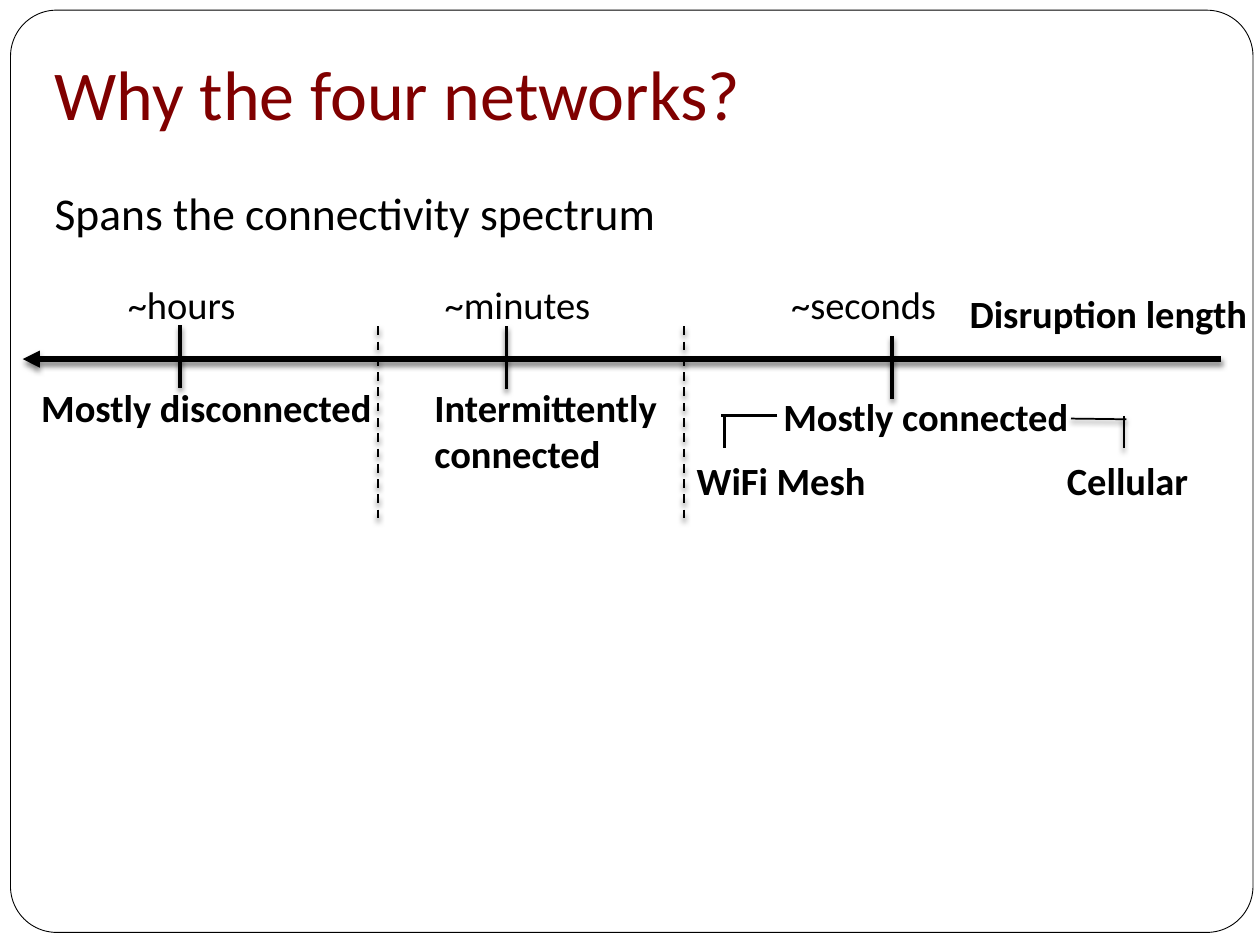
from dataclasses import dataclass

from lxml import etree
from pptx import Presentation
from pptx.dml.color import RGBColor
from pptx.enum import dml, shapes, text
from pptx.oxml import ns
from pptx.util import Pt


@dataclass(frozen=True)
class Theme:
    font: str = "Calibri"
    ink: RGBColor = RGBColor(0, 0, 0)
    paper: RGBColor = RGBColor(255, 255, 255)
    accent: RGBColor = RGBColor(128, 0, 0)
    title: float = 40
    body: float = 26
    label: float = 22


@dataclass(frozen=True)
class Label:
    words: str
    left: float
    top: float
    width: float
    bold: bool = True
    height: float = 34


@dataclass(frozen=True)
class Line:
    x1: float
    y1: float
    x2: float
    y2: float
    weight: float
    shade: bool = True
    dash: bool = False
    arrow: bool = False


THEME = Theme()

LABELS = [
    Label("~hours", 66, 157, 77, False),
    Label("~minutes", 247, 157, 99, False),
    Label("~seconds", 445, 157, 99, False),
    Label("Disruption length", 547, 162, 175),
    Label("Mostly disconnected", 16.5, 216, 205),
    Label("Intermittently\nconnected", 241.2, 216, 144, height=60.5),
    Label("Mostly connected", 440.6, 221, 180),
    Label("WiFi Mesh", 391, 257.8, 137.5),
    Label("Cellular", 602.6, 257.8, 105),
]

BOUNDS = [Line(x, 186.5, x, 298, 1.25, dash=True) for x in (216, 391)]
AXIS = Line(13, 205.2, 697.7, 205.2, 3.25, arrow=True)
TICKS = [Line(x, y, x, y + 36, 2)
         for x, y in ((103, 185.8), (289.4, 186.5), (509.8, 192.2))]
FORK = [
    Line(414, 237.6, 414, 256.3, 1.5, shade=False),
    Line(444.2, 237.6, 411.8, 237.6, 1.5, shade=False),
    Line(643.7, 239.6, 612, 239.2, 1),
    Line(642.2, 237.6, 642.2, 256.3, 1),
]


def style(frame, size: float, color: RGBColor, bold: bool = False) -> None:
    for para in frame.paragraphs:
        font = para.font
        font.name, font.size, font.bold = THEME.font, Pt(size), bold
        font.color.rgb = color
        para.alignment = text.PP_ALIGN.LEFT


def place(shape, left: float, top: float, width: float, height: float) -> None:
    shape.left, shape.top = Pt(left), Pt(top)
    shape.width, shape.height = Pt(width), Pt(height)


def draw_label(slide, item: Label) -> None:
    box = slide.shapes.add_textbox(
        Pt(item.left), Pt(item.top), Pt(item.width), Pt(item.height))
    box.text_frame.text = item.words
    box.text_frame.word_wrap = False
    style(box.text_frame, THEME.label, THEME.ink, item.bold)


def draw_line(slide, item: Line) -> None:
    line = slide.shapes.add_connector(
        shapes.MSO_CONNECTOR.STRAIGHT,
        Pt(item.x1), Pt(item.y1), Pt(item.x2), Pt(item.y2))
    line.line.color.rgb = THEME.ink
    line.line.width = Pt(item.weight)
    if item.dash:
        line.line.dash_style = dml.MSO_LINE.DASH
    props = line._element.spPr
    if item.arrow:
        etree.SubElement(props.find(ns.qn("a:ln")), ns.qn("a:headEnd"), type="triangle")
    effect = etree.SubElement(props, ns.qn("a:effectLst"))
    if item.shade:
        shadow = etree.SubElement(
            effect, ns.qn("a:outerShdw"), blurRad=str(Pt(3)), dist=str(Pt(2)),
            dir="5400000", rotWithShape="0")
        color = etree.SubElement(shadow, ns.qn("a:srgbClr"), val=str(THEME.ink))
        etree.SubElement(color, ns.qn("a:alpha"), val="50000")


def draw_frame(slide) -> None:
    card = slide.shapes.add_shape(
        shapes.MSO_SHAPE.ROUNDED_RECTANGLE, Pt(6), Pt(5.8), Pt(710), Pt(527))
    card.adjustments[0] = 0.05
    card.shadow.inherit = False
    card.fill.solid()
    card.fill.fore_color.rgb = THEME.paper
    card.line.color.rgb = THEME.ink
    card.line.width = Pt(0.5)
    slide.shapes._spTree.insert(2, card._element)


def fill_text(slide) -> None:
    title, body = slide.shapes.title, slide.placeholders[1]
    place(title, 24, -6, 696, 90)
    place(body, 24, 102, 696, 55)
    title.text_frame.text = "Why the four networks?"
    title.text_frame.vertical_anchor = text.MSO_ANCHOR.BOTTOM
    title.text_frame.margin_bottom = Pt(7.2)
    body.text_frame.text = "Spans the connectivity spectrum"
    for shape in (title, body):
        shape.text_frame.auto_size = text.MSO_AUTO_SIZE.NONE
    style(title.text_frame, THEME.title, THEME.accent)
    style(body.text_frame, THEME.body, THEME.ink)
    para = body.text_frame.paragraphs[0]
    para.space_before = Pt(5.8)
    props = para._p.get_or_add_pPr()
    props.set("marL", str(Pt(21.6)))
    props.set("indent", str(-Pt(21.6)))
    bullet = etree.Element(ns.qn("a:buNone"))
    props.find(ns.qn("a:spcBef")).addnext(bullet)


def main() -> None:
    deck = Presentation()
    deck.slide_width, deck.slide_height = Pt(720), Pt(540)
    slide = deck.slides.add_slide(deck.slide_layouts[1])
    draw_frame(slide)
    fill_text(slide)
    for item in [*BOUNDS, AXIS, *TICKS, *FORK]:
        draw_line(slide, item)
    for item in LABELS:
        draw_label(slide, item)
    deck.save("out.pptx")


if __name__ == "__main__":
    main()
